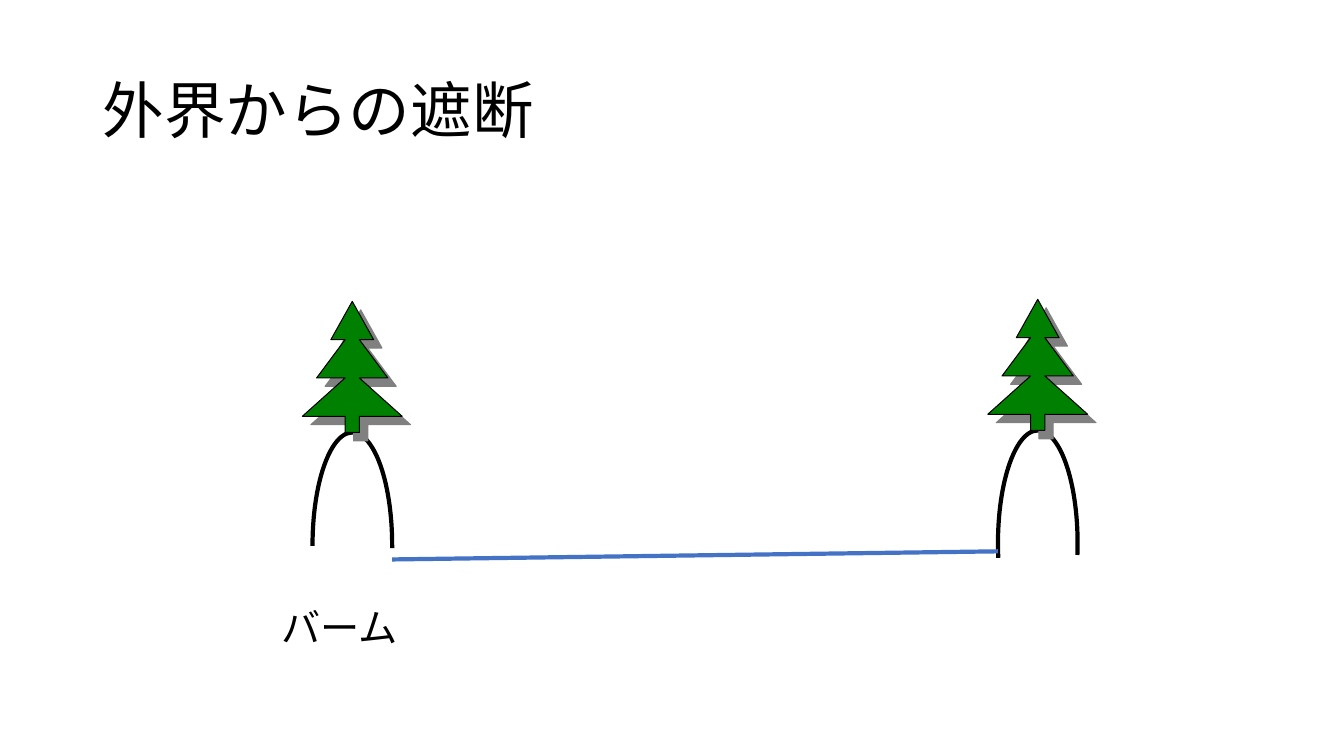
from lxml import etree
from pptx import Presentation, util as u
from pptx.dml.color import RGBColor
from pptx.enum import shapes, text
from pptx.oxml import ns

BLACK = RGBColor(0x00, 0x00, 0x00)
GREEN = RGBColor(0x00, 0x80, 0x00)
BLUE = RGBColor(0x44, 0x72, 0xC4)
GRAY = RGBColor(0x80, 0x80, 0x80)

COLS, ROWS = 80, 45
BERM_W, BERM_H = 4.74, 13.44
TREE_W, TREE_H = 5.94, 7.8
BRANCH = [(0, 0), (3, 1), (1, 1), (5, 2), (1, 2), (7, 3), (1, 3), (1, 3.42)]
BERMS = [(18.6, 25.74, (215.49, 110.48)), (59.4, 25.62, (203.88, 117.87))]


class Scene:
    font = {"name": "Calibri"}

    def __init__(self, deck):
        self.wide, self.high = deck.slide_width, deck.slide_height
        self.slide = deck.slides.add_slide(deck.slide_layouts[5])
        self.shapes = self.slide.shapes

    def x(self, col):
        return round(self.wide * col / COLS)

    def y(self, row):
        return round(self.high * row / ROWS)

    def box(self, col, row, wide, high):
        return self.x(col), self.y(row), self.x(wide), self.y(high)

    def style(self, item, form):
        for key, value in form.items():
            setattr(item, key, value)

    def line(self, shape, color, width):
        shape.line.color.rgb = color
        shape.line.width = u.Pt(width)

    def words(self, frame, value, size, **form):
        frame.text = value
        frame.word_wrap = True
        para = frame.paragraphs[0]
        self.style(para, {"alignment": text.PP_ALIGN.LEFT, **form})
        run = para.runs[0].font
        self.style(run, {**self.font, "size": u.Pt(size)})
        run.color.rgb = BLACK

    def title(self, value, *cell):
        head = self.shapes.title
        names = ("left", "top", "width", "height")
        self.style(head, dict(zip(names, self.box(*cell))))
        head.text_frame.vertical_anchor = text.MSO_ANCHOR.MIDDLE
        self.words(head.text_frame, value, 44, line_spacing=0.9)

    def label(self, value, *cell):
        frame = self.shapes.add_textbox(*self.box(*cell)).text_frame
        self.words(frame, value, 28)
        frame.auto_size = text.MSO_AUTO_SIZE.SHAPE_TO_FIT_TEXT

    def berm(self, col, row, ends):
        arc = self.shapes.add_shape(
            shapes.MSO_SHAPE.ARC, *self.box(col, row, BERM_W, BERM_H))
        arc.rotation = 180
        for index, end in enumerate(ends):
            arc.adjustments[index] = end
        arc.fill.background()
        self.line(arc, BLACK, 3)
        arc.shadow.inherit = False

    def ground(self, col, row, col2, row2):
        link = self.shapes.add_connector(
            shapes.MSO_CONNECTOR.STRAIGHT,
            self.x(col), self.y(row), self.x(col2), self.y(row2))
        self.line(link, BLUE, 3)
        etree.SubElement(link._element.spPr, ns.qn("a:effectLst"))

    def tree(self, col, row):
        mid = col + TREE_W / 2
        left = [(-dx, dy) for dx, dy in reversed(BRANCH[1:])]
        dots = [(self.x(mid + dx * TREE_W / 14),
                 self.y(row + dy * TREE_H / 3.42)) for dx, dy in BRANCH + left]
        pen = self.shapes.build_freeform(*dots[0])
        pen.add_line_segments(dots[1:], close=True)
        tree = pen.convert_to_shape()
        tree.fill.solid()
        tree.fill.fore_color.rgb = GREEN
        self.line(tree, BLACK, 0.75)
        self.shade(tree)

    def shade(self, shape):
        shape.shadow.inherit = False
        spot = shape._element.spPr.find(ns.qn("a:effectLst"))
        cast = etree.SubElement(
            spot, ns.qn("a:outerShdw"), blurRad="0", dist=str(u.Pt(8.5)),
            dir=str(45 * 60000), algn="ctr", rotWithShape="0")
        etree.SubElement(cast, ns.qn("a:srgbClr"), val=str(GRAY))


def main():
    deck = Presentation()
    deck.slide_width, deck.slide_height = u.Inches(13.33), u.Inches(7.5)
    scene = Scene(deck)
    scene.title("外界からの遮断", 5.5, 2.4, 69, 8.7)
    for berm in BERMS:
        scene.berm(*berm)
    (near, _, _), (far, _, _) = BERMS
    scene.ground(near + BERM_W, 33.3, far, 32.82)
    scene.label("バーム", 16.14, 35.64, 15.6, 3.42)
    for col, row, _ in reversed(BERMS):
        scene.tree(col + (BERM_W - TREE_W) / 2, row - TREE_H)
    deck.save("out.pptx")


if __name__ == "__main__":
    main()
